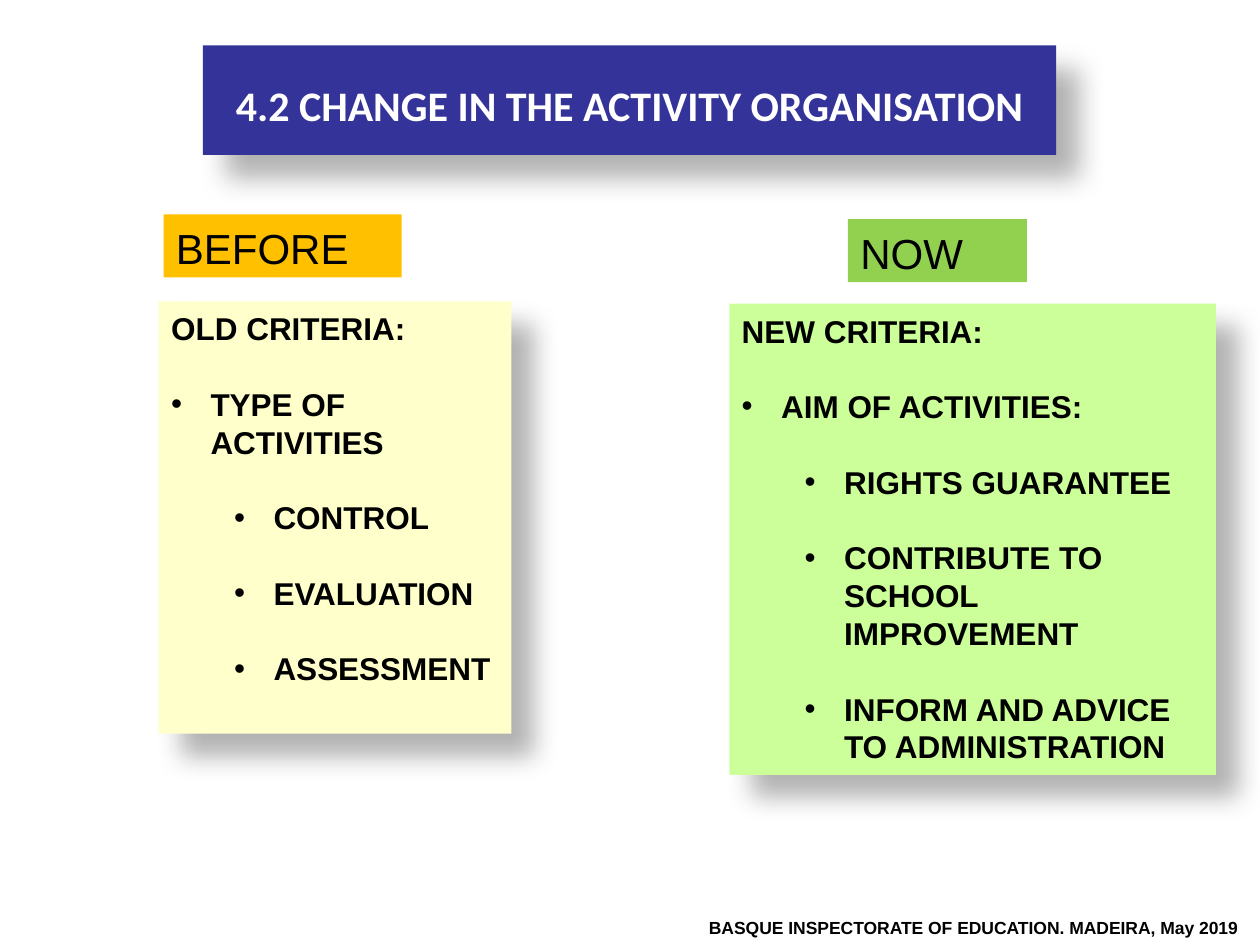
from lxml import etree
from pptx import Presentation
from pptx.dml.color import RGBColor
from pptx.enum.shapes import MSO_SHAPE
from pptx.enum.text import MSO_ANCHOR, PP_ALIGN
from pptx.oxml.ns import qn
from pptx.util import Pt

RECTANGLE = MSO_SHAPE.RECTANGLE
TOP, MIDDLE = MSO_ANCHOR.TOP, MSO_ANCHOR.MIDDLE
LEFT, CENTER = PP_ALIGN.LEFT, PP_ALIGN.CENTER

COLORS = {
    "text": "000000",
    "title_text": "FFFFFF",
    "title": "333399",
    "before": "FFC000",
    "now": "92D050",
    "old_criteria": "FFFFCC",
    "new_criteria": "CCFF99",
    "shadow": "000000",
}
TITLE_FONT = {"name": "Calibri", "size": Pt(24), "bold": True}
HEADING_FONT = {"name": "Arial", "size": Pt(24), "bold": False}
CRITERIA_FONT = {"name": "Arial", "size": Pt(18), "bold": True}
FOOTER_FONT = {"name": "Arial", "size": Pt(10), "bold": True}
HEADING_LINE = Pt(28.8)
CRITERIA_LINE = Pt(21.6)
HANGING = 22.5
LEVEL_STEP = 36


def add_shadow(panel):
    effects = panel._element.spPr.find(qn("a:effectLst"))
    shadow = etree.SubElement(
        effects, qn("a:outerShdw"), blurRad=str(Pt(15)), dist=str(Pt(18)),
        dir=str(45 * 60000), algn="tl", rotWithShape="0")
    color = etree.SubElement(shadow, qn("a:srgbClr"), val=COLORS["shadow"])
    etree.SubElement(color, qn("a:alpha"), val="30000")


def add_panel(slide, bounds, fill, shadowed=False, anchor=TOP, top_inset=4.5):
    panel = slide.shapes.add_shape(RECTANGLE, *map(Pt, bounds))
    panel.shadow.inherit = False
    panel.fill.solid()
    panel.fill.fore_color.rgb = RGBColor.from_string(COLORS[fill])
    panel.line.fill.background()
    if shadowed:
        add_shadow(panel)
    frame = panel.text_frame
    frame.word_wrap = True
    frame.vertical_anchor = anchor
    frame.margin_top = Pt(top_inset)
    return frame


def write_line(paragraph, text, font_format, align=LEFT, color="text"):
    paragraph.alignment = align
    run = paragraph.add_run()
    run.text = text
    for attribute, value in font_format.items():
        setattr(run.font, attribute, value)
    run.font.color.rgb = RGBColor.from_string(COLORS[color])


def add_title(slide, bounds, text):
    frame = add_panel(slide, bounds, "title", True, MIDDLE, 9)
    write_line(frame.paragraphs[0], text, TITLE_FONT, CENTER, "title_text")


def add_heading(slide, bounds, text, fill):
    heading = add_panel(slide, bounds, fill).paragraphs[0]
    heading.line_spacing = HEADING_LINE
    write_line(heading, text, HEADING_FONT)


def add_bullet(paragraph, level):
    properties = paragraph._p.get_or_add_pPr()
    properties.set("marL", str(Pt(HANGING + level * LEVEL_STEP)))
    properties.set("indent", str(Pt(-HANGING)))
    etree.SubElement(properties, qn("a:buFont"), typeface="Arial")
    etree.SubElement(properties, qn("a:buChar"), char="•")


def add_criteria(slide, bounds, fill, caption, items):
    frame = add_panel(slide, bounds, fill, True)
    first = frame.paragraphs[0]
    first.line_spacing = CRITERIA_LINE
    write_line(first, caption, CRITERIA_FONT)
    for level, text in items:
        item = frame.add_paragraph()
        item.level = level
        item.line_spacing = CRITERIA_LINE
        item.space_before = CRITERIA_LINE
        add_bullet(item, level)
        write_line(item, text, CRITERIA_FONT)


def add_footer(slide, bounds, text):
    frame = slide.shapes.add_textbox(*map(Pt, bounds)).text_frame
    frame.word_wrap = False
    write_line(frame.paragraphs[0], text, FOOTER_FONT)


def main():
    deck = Presentation()
    deck.slide_width, deck.slide_height = Pt(720), Pt(540)
    slide = deck.slides.add_slide(deck.slide_layouts[6])

    add_title(slide, (116, 26, 487.5, 62.5),
              "4.2 CHANGE IN THE ACTIVITY ORGANISATION")
    add_footer(slide, (398, 520.5, 322, 19.5),
               "BASQUE INSPECTORATE OF EDUCATION. MADEIRA, May 2019")

    add_heading(slide, (93.5, 122.5, 136, 36), "BEFORE", "before")
    add_criteria(slide, (90.75, 172.25, 201.5, 247), "old_criteria",
                 "OLD CRITERIA:", [
                     (0, "TYPE OF ACTIVITIES"),
                     (1, "CONTROL"),
                     (1, "EVALUATION"),
                     (1, "ASSESSMENT"),
                 ])

    add_heading(slide, (484.5, 125.25, 102.25, 36), "NOW", "now")
    add_criteria(slide, (416.75, 173.5, 278, 269.25), "new_criteria",
                 "NEW CRITERIA:", [
                     (0, "AIM OF ACTIVITIES:"),
                     (1, "RIGHTS GUARANTEE"),
                     (1, "CONTRIBUTE TO SCHOOL IMPROVEMENT"),
                     (1, "INFORM AND ADVICE TO ADMINISTRATION"),
                 ])

    deck.save("out.pptx")


if __name__ == "__main__":
    main()
